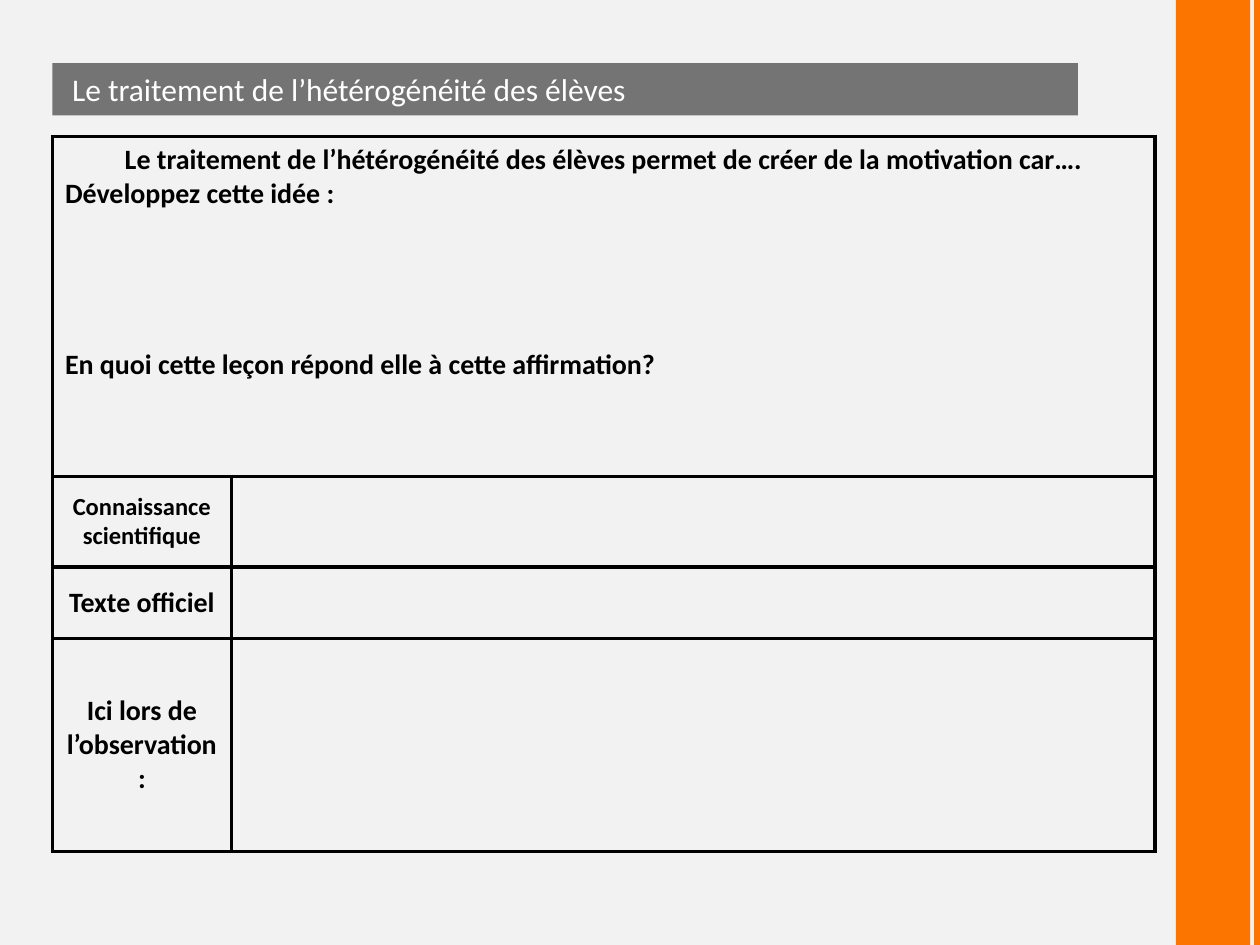
from lxml import etree
from pptx import Presentation
from pptx.dml.color import RGBColor
from pptx.enum.shapes import MSO_CONNECTOR, MSO_SHAPE
from pptx.enum.text import MSO_ANCHOR, MSO_AUTO_SIZE, PP_ALIGN
from pptx.oxml.ns import qn
from pptx.util import Pt

LEFT, CENTER = PP_ALIGN.LEFT, PP_ALIGN.CENTER
TOP, MIDDLE = MSO_ANCHOR.TOP, MSO_ANCHOR.MIDDLE
RECT, STRAIGHT = MSO_SHAPE.RECTANGLE, MSO_CONNECTOR.STRAIGHT
NO_FIT = MSO_AUTO_SIZE.NONE

PAPER = RGBColor(0xF2, 0xF2, 0xF2)
ORANGE = RGBColor(0xFC, 0x75, 0x00)
DARK = RGBColor(0x0D, 0x0D, 0x0D)
WHITE = RGBColor(0xFF, 0xFF, 0xFF)
BLACK = RGBColor(0, 0, 0)

FONT = "Calibri"
WIDTH, HEIGHT = 720, 540
COLS = (102.24, 527.76)
ROWS = (194.2, 51.8, 40.8, 122)
# text, alignment, space before
INTRO = (
    ("Le traitement de l’hétérogénéité des élèves permet de créer de la motivation car….", CENTER, 0),
    ("Développez cette idée :", LEFT, 0),
    ("En quoi cette leçon répond elle à cette affirmation?", LEFT, 78),
)
LABELS = (
    ("Connaissance scientifique", 14),
    ("Texte officiel", 16),
    ("Ici lors de l’observation:", 16),
)


def style(para, size, color, bold, align):
    para.alignment = align
    for run in para.runs:
        font = run.font
        font.name, font.size, font.bold = FONT, Pt(size), bold
        font.color.rgb = color


def add_band(slide, left, top, width, height):
    """Draw the orange side bar and the thin line at its right."""
    bar = slide.shapes.add_shape(RECT, Pt(left), Pt(top), Pt(width), Pt(height))
    bar.shadow.inherit = False
    bar.fill.solid()
    bar.fill.fore_color.rgb = ORANGE
    bar.line.fill.background()
    x = left + width + 4.2
    line = slide.shapes.add_connector(STRAIGHT, Pt(x), Pt(top), Pt(x), Pt(top + height))
    line.line.color.rgb = ORANGE
    line.line.width = Pt(4)
    etree.SubElement(line._element.spPr, qn("a:effectLst"))


def add_title(slide, left, top, width, height):
    title = slide.shapes.title
    title.left, title.top, title.width, title.height = map(Pt, (left, top, width, height))
    title.fill.solid()
    title.fill.fore_color.rgb = DARK
    tint = title._element.spPr.find(".//" + qn("a:srgbClr"))
    etree.SubElement(tint, qn("a:alpha"), val="55000")
    frame = title.text_frame
    frame.text = "Le traitement de l’hétérogénéité des élèves"
    frame.auto_size = NO_FIT
    frame.vertical_anchor = MIDDLE
    frame.margin_left = Pt(11.2)
    style(frame.paragraphs[0], 18, WHITE, False, LEFT)


def set_cell(cell):
    """Clear the cell's fill and give it black borders."""
    cell.fill.background()
    props = cell._tc.get_or_add_tcPr()
    for place, side in enumerate(("lnL", "lnR", "lnT", "lnB")):
        edge = etree.Element(qn("a:" + side), w=str(Pt(2.25)))
        fill = etree.SubElement(edge, qn("a:solidFill"))
        etree.SubElement(fill, qn("a:srgbClr"), val=str(BLACK))
        props.insert(place, edge)


def add_grid(slide, left, top, width, height):
    frame = slide.shapes.add_table(len(ROWS), len(COLS), Pt(left), Pt(top), Pt(width), Pt(height))
    table = frame.table
    table.first_row = table.horz_banding = False
    for col, size in zip(table.columns, COLS):
        col.width = Pt(size)
    for row, size in zip(table.rows, ROWS):
        row.height = Pt(size)
        for cell in row.cells:
            set_cell(cell)

    intro = table.cell(0, 0)
    intro.merge(table.cell(0, 1))
    intro.vertical_anchor = TOP
    body = intro.text_frame
    body.text = "\n".join(text for text, _, _ in INTRO)
    for para, (_, align, gap) in zip(body.paragraphs, INTRO):
        para.space_before = Pt(gap)
        style(para, 16, BLACK, True, align)

    for row, (text, size) in enumerate(LABELS, 1):
        cell = table.cell(row, 0)
        cell.vertical_anchor = MIDDLE
        cell.text_frame.text = text
        style(cell.text_frame.paragraphs[0], size, BLACK, True, CENTER)


def main():
    deck = Presentation()
    deck.slide_width, deck.slide_height = Pt(WIDTH), Pt(HEIGHT)
    slide = deck.slides.add_slide(deck.slide_layouts[5])
    back = slide.background.fill
    back.solid()
    back.fore_color.rgb = PAPER
    add_band(slide, 672, 0, 42.4, HEIGHT)
    add_title(slide, 30, 36, 586, 30)
    add_grid(slide, 30, 78, sum(COLS), sum(ROWS))
    deck.save("out.pptx")


if __name__ == "__main__":
    main()
